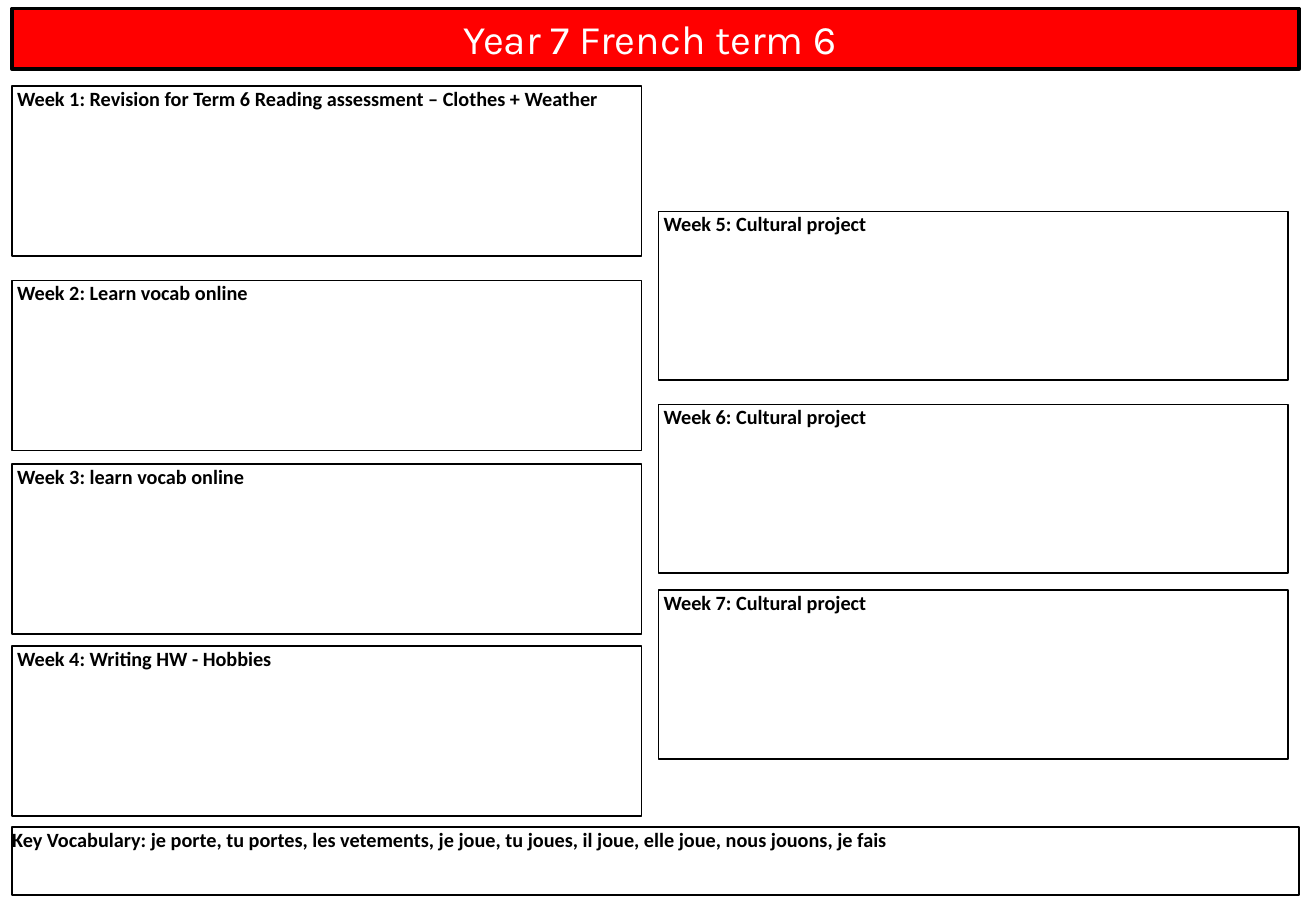
from dataclasses import dataclass
from typing import Optional

from pptx import Presentation
from pptx.dml.color import RGBColor
from pptx.enum.shapes import MSO_SHAPE as Shape
from pptx.enum.text import MSO_ANCHOR as Anchor, MSO_AUTO_SIZE as AutoSize, PP_ALIGN as Align
from pptx.util import Emu, Pt

PX = 9144  # 100 px to the inch

BLACK = RGBColor(0, 0, 0)
WHITE = RGBColor(255, 255, 255)
RED = RGBColor(255, 0, 0)

LABEL_FONT = {"name": "Calibri", "size": Pt(12), "bold": True}
TITLE_FONT = {"name": "Karla", "size": Pt(24), "bold": False}

LEFT_COLUMN, RIGHT_COLUMN = 10, 542
WEEK_WIDTH, BANNER_WIDTH = 518, 1059
WEEK_INDENT = 4


@dataclass(frozen=True)
class Panel:
    text: str
    left: int
    top: int
    width: int
    height: int
    font: dict
    color: RGBColor = BLACK
    fill: Optional[RGBColor] = None
    line_pt: float = 1
    align: Align = Align.LEFT
    auto_size: AutoSize = AutoSize.NONE
    insets: tuple[int, int, int, int] = (0, 0, 0, 0)  # left, top, right, bottom


def px(length: int) -> Emu:
    return Emu(length * PX)


def draw_panel(slide, panel: Panel) -> None:
    box = slide.shapes.add_shape(
        Shape.RECTANGLE, px(panel.left), px(panel.top), px(panel.width), px(panel.height))
    box.shadow.inherit = False
    if panel.fill is None:
        box.fill.background()
    else:
        box.fill.solid()
        box.fill.fore_color.rgb = panel.fill
    box.line.color.rgb = BLACK
    box.line.width = Pt(panel.line_pt)

    left, top, right, bottom = map(px, panel.insets)
    frame_format = {
        "margin_left": left, "margin_top": top,
        "margin_right": right, "margin_bottom": bottom,
        "word_wrap": True, "vertical_anchor": Anchor.TOP,
        "auto_size": panel.auto_size,
    }
    for name, value in frame_format.items():
        setattr(box.text_frame, name, value)

    label = box.text_frame.paragraphs[0]
    label.alignment = panel.align
    wording = label.add_run()
    wording.text = panel.text
    for name, value in panel.font.items():
        setattr(wording.font, name, value)
    wording.font.color.rgb = panel.color


def week(text: str, left: int, top: int, height: int) -> Panel:
    return Panel(text, left, top, WEEK_WIDTH, height, LABEL_FONT,
                 insets=(WEEK_INDENT, 0, 0, 0))


TITLE = Panel("Year 7 French term 6", LEFT_COLUMN, 7, BANNER_WIDTH, 50, TITLE_FONT,
              color=WHITE, fill=RED, line_pt=2.25, align=Align.CENTER,
              auto_size=AutoSize.SHAPE_TO_FIT_TEXT, insets=(10, 5, 19, 5))

WEEKS = [
    week("Week 1: Revision for Term 6 Reading assessment – Clothes + Weather",
         LEFT_COLUMN, 71, 140),
    week("Week 2: Learn vocab online", LEFT_COLUMN, 231, 140),
    week("Week 3: learn vocab online", LEFT_COLUMN, 382, 140),
    week("Week 4: Writing HW - Hobbies", LEFT_COLUMN, 532, 140),
    week("Week 5: Cultural project", RIGHT_COLUMN, 174, 139),
    week("Week 6: Cultural project", RIGHT_COLUMN, 333, 139),
    week("Week 7: Cultural project", RIGHT_COLUMN, 486, 139),
]

VOCABULARY = Panel(
    "Key Vocabulary: je porte, tu portes, les vetements, je joue, tu joues, "
    "il joue, elle joue, nous jouons, je fais",
    LEFT_COLUMN, 681, BANNER_WIDTH, 56, LABEL_FONT)


def main() -> None:
    deck = Presentation()
    deck.slide_width, deck.slide_height = px(1083), px(750)
    slide = deck.slides.add_slide(deck.slide_layouts[6])

    # Title banner, weekly homework boxes, vocabulary strip
    for panel in [TITLE, *WEEKS, VOCABULARY]:
        draw_panel(slide, panel)

    deck.save("out.pptx")


if __name__ == "__main__":
    main()
